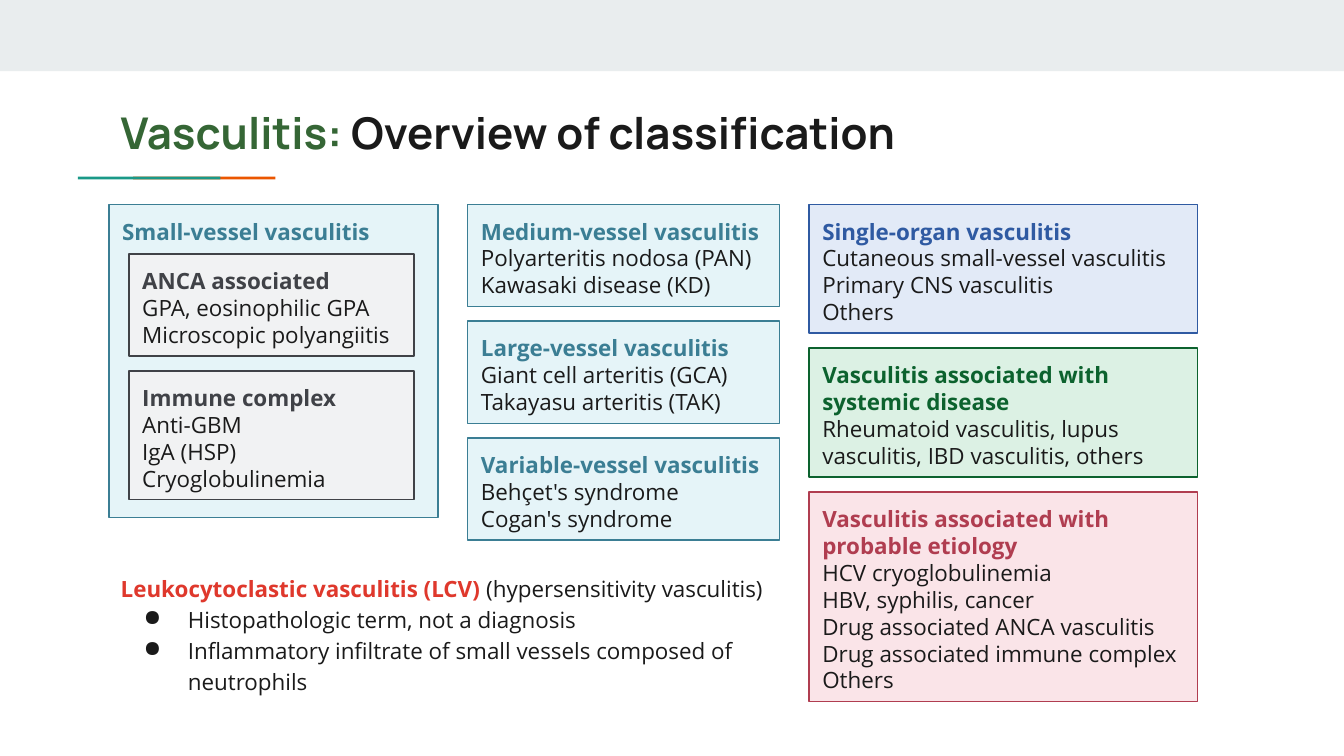
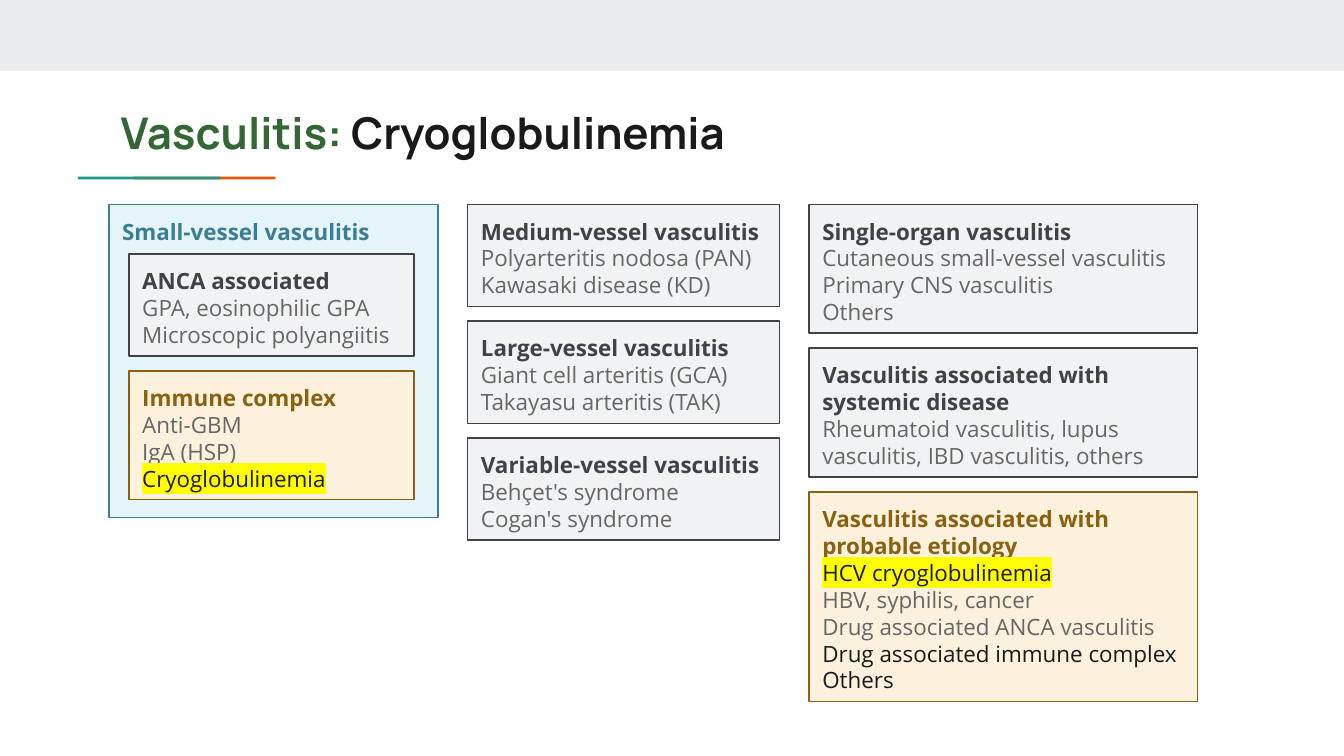
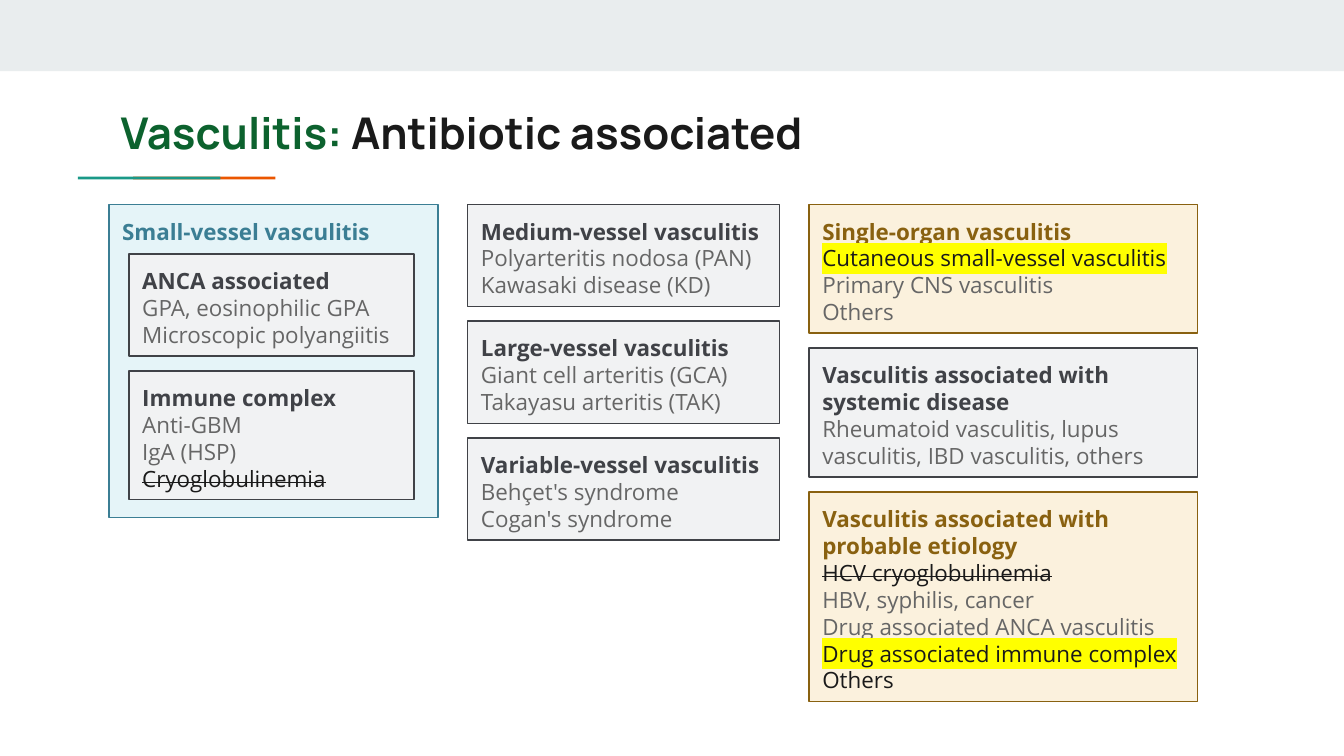
"""Build three slides on the classification of vasculitis."""
from dataclasses import dataclass, field
from enum import Enum, auto

from lxml import etree
from pptx import Presentation
from pptx import util as u
from pptx.dml.color import RGBColor
from pptx.enum import shapes, text
from pptx.oxml import ns

SLIDE_WIDTH = u.Inches(10)
SLIDE_HEIGHT = u.Inches(5.625)
CELL = SLIDE_WIDTH // 100
PADDING = 1
TOP_ROW = 15.2
BOX_GAP = 1.1
LINE_ROWS = 2
BOX_EXTRA_ROWS = 1.6

TITLE_FONT, TITLE_SIZE = "Manrope", u.Pt(23.4)
BODY_FONT, BODY_SIZE = "Open Sans", u.Pt(12)

BAND = RGBColor(0xE9, 0xED, 0xEE)
ORANGE = RGBColor(0xEB, 0x56, 0x00)
TURQUOISE = RGBColor(0x1A, 0x99, 0x88)
INK = RGBColor(0x1A, 0x1A, 0x1A)
MUTED = RGBColor(0x66, 0x66, 0x66)
YELLOW = RGBColor(0xFF, 0xFF, 0x00)
RED = RGBColor(0xDF, 0x38, 0x2C)
TITLE_GREEN = RGBColor(0x35, 0x66, 0x35)
DEEP_GREEN = RGBColor(0x0C, 0x62, 0x2E)


@dataclass(frozen=True)
class Theme:
    """Fill of a box and the colour of its outline and heading."""
    fill: RGBColor
    accent: RGBColor


TEAL = Theme(RGBColor(0xE5, 0xF4, 0xF8), RGBColor(0x3B, 0x7E, 0x94))
GRAY = Theme(RGBColor(0xF1, 0xF2, 0xF3), RGBColor(0x40, 0x42, 0x47))
BLUE = Theme(RGBColor(0xE2, 0xEA, 0xF7), RGBColor(0x2F, 0x5A, 0xA2))
GREEN = Theme(RGBColor(0xDC, 0xF1, 0xE4), DEEP_GREEN)
PINK = Theme(RGBColor(0xFA, 0xE4, 0xE8), RGBColor(0xB0, 0x3D, 0x50))
AMBER = Theme(RGBColor(0xFB, 0xF1, 0xDD), RGBColor(0x89, 0x61, 0x10))


class Mark(Enum):
    """Emphasis of one entry."""
    PLAIN = auto()
    HIGHLIGHT = auto()
    STRIKE = auto()


@dataclass(frozen=True)
class Area:
    """Rectangle in grid columns and rows."""
    column: float
    row: float
    columns: float
    rows: float

    def lengths(self) -> tuple[int, ...]:
        """Return left, top, width and height."""
        return tuple(round(n * CELL) for n in (self.column, self.row, self.columns, self.rows))


@dataclass(frozen=True)
class Box:
    """Disease group with its entries."""
    heading: str
    entries: tuple[str, ...]
    theme: Theme
    lines: int


@dataclass(frozen=True)
class Stack:
    """Boxes placed below one another."""
    column: float
    row: float
    columns: float
    boxes: tuple[Box, ...]


@dataclass(frozen=True)
class Focus:
    """Theme and marked entries of a box on a focused slide."""
    theme: Theme
    marks: dict[str, Mark]


@dataclass(frozen=True)
class Topic:
    """Content that differs from slide to slide."""
    title: str
    title_color: RGBColor = TITLE_GREEN
    overview: bool = False
    focuses: dict[str, Focus] = field(default_factory=dict)


IMMUNE = "Immune complex"
SINGLE_ORGAN = "Single-organ vasculitis"
ETIOLOGY = "Vasculitis associated with probable etiology"
CRYO = "Cryoglobulinemia"
HCV = "HCV cryoglobulinemia"
CUTANEOUS = "Cutaneous small-vessel vasculitis"
DRUG_IMMUNE = "Drug associated immune complex"
OTHERS = "Others"

SMALL_VESSEL = Box("Small-vessel vasculitis", (), TEAL, 1)
SMALL_VESSEL_AREA = Area(8.1, TOP_ROW, 24.5, 23.3)
STACKS = (
    Stack(9.6, 18.9, 21.2, (
        Box("ANCA associated", ("GPA, eosinophilic GPA", "Microscopic polyangiitis"), GRAY, 3),
        Box(IMMUNE, ("Anti-GBM", "IgA (HSP)", CRYO), GRAY, 4),
    )),
    Stack(34.8, TOP_ROW, 23.2, (
        Box("Medium-vessel vasculitis",
            ("Polyarteritis nodosa (PAN)", "Kawasaki disease (KD)"), TEAL, 3),
        Box("Large-vessel vasculitis",
            ("Giant cell arteritis (GCA)", "Takayasu arteritis (TAK)"), TEAL, 3),
        Box("Variable-vessel vasculitis", ("Behçet's syndrome", "Cogan's syndrome"), TEAL, 3),
    )),
    Stack(60.2, TOP_ROW, 28.9, (
        Box(SINGLE_ORGAN, (CUTANEOUS, "Primary CNS vasculitis", OTHERS), BLUE, 4),
        Box("Vasculitis associated with systemic disease",
            ("Rheumatoid vasculitis, lupus vasculitis, IBD vasculitis, others",), GREEN, 4),
        Box(ETIOLOGY, (HCV, "HBV, syphilis, cancer", "Drug associated ANCA vasculitis",
                       DRUG_IMMUNE, OTHERS), PINK, 7),
    )),
)
TOPICS = (
    Topic("Overview of classification", overview=True),
    Topic(CRYO, focuses={
        IMMUNE: Focus(AMBER, {CRYO: Mark.HIGHLIGHT}),
        ETIOLOGY: Focus(AMBER, {HCV: Mark.HIGHLIGHT, DRUG_IMMUNE: Mark.PLAIN,
                                OTHERS: Mark.PLAIN}),
    }),
    Topic("Antibiotic associated", DEEP_GREEN, focuses={
        IMMUNE: Focus(GRAY, {CRYO: Mark.STRIKE}),
        SINGLE_ORGAN: Focus(AMBER, {CUTANEOUS: Mark.HIGHLIGHT}),
        ETIOLOGY: Focus(AMBER, {HCV: Mark.STRIKE, DRUG_IMMUNE: Mark.HIGHLIGHT,
                                OTHERS: Mark.PLAIN}),
    }),
)
LCV_NOTES = (
    "Histopathologic term, not a diagnosis",
    "Inflammatory infiltrate of small vessels composed of neutrophils",
)


def add_run(paragraph, words: str, color: RGBColor, bold: bool = False,
            font: str = BODY_FONT, size: int = BODY_SIZE, mark: Mark = Mark.PLAIN) -> None:
    """Append one formatted run."""
    run = paragraph.add_run()
    run.text = words
    run.font.name, run.font.size, run.font.bold = font, size, bold
    run.font.color.rgb = color
    properties = run._r.get_or_add_rPr()
    if mark is Mark.STRIKE:
        properties.set("strike", "sngStrike")
    elif mark is Mark.HIGHLIGHT:
        highlight = etree.Element(ns.qn("a:highlight"))
        etree.SubElement(highlight, ns.qn("a:srgbClr"), val=str(YELLOW))
        properties.find(ns.qn("a:solidFill")).addnext(highlight)


def add_bullet(paragraph) -> None:
    """Give a paragraph a hanging round bullet."""
    properties = paragraph._p.get_or_add_pPr()
    properties.set("marL", str(u.Inches(0.5)))
    properties.set("indent", str(u.Inches(-0.33)))
    color = etree.SubElement(properties, ns.qn("a:buClr"))
    etree.SubElement(color, ns.qn("a:srgbClr"), val=str(INK))
    etree.SubElement(properties, ns.qn("a:buChar"), char="●")


def prepare_frame(shape):
    """Set wrapping, insets and top alignment and return the text frame."""
    frame = shape.text_frame
    frame.word_wrap = True
    frame.vertical_anchor = text.MSO_ANCHOR.TOP
    frame.margin_left = frame.margin_right = PADDING * CELL
    frame.margin_top = frame.margin_bottom = PADDING * CELL
    return frame


def add_rectangle(slide, area: Area, fill: RGBColor, outline: RGBColor | None = None):
    """Draw a flat rectangle."""
    shape = slide.shapes.add_shape(shapes.MSO_SHAPE.RECTANGLE, *area.lengths())
    shape.shadow.inherit = False
    shape.fill.solid()
    shape.fill.fore_color.rgb = fill
    if outline is None:
        shape.line.fill.background()
    else:
        shape.line.color.rgb = outline
        shape.line.width = u.Pt(0.75)
    return shape


def add_header(slide, topic: Topic) -> None:
    """Draw the top band, the two-colour rule and the title."""
    add_rectangle(slide, Area(0, 0, 100, 5.3), BAND)
    for column, color in ((9.9, ORANGE), (5.8, TURQUOISE)):
        add_rectangle(slide, Area(column, 13.15, 10.6, 0.2), color)
    title = slide.shapes.add_textbox(*Area(8, 6.9, 84.1, 5.9).lengths())
    paragraph = prepare_frame(title).paragraphs[0]
    add_run(paragraph, "Vasculitis:", topic.title_color, True, TITLE_FONT, TITLE_SIZE)
    add_run(paragraph, f" {topic.title}", INK, True, TITLE_FONT, TITLE_SIZE)


def add_box(slide, box: Box, area: Area, theme: Theme, entry_color: RGBColor,
            marks: dict[str, Mark]) -> None:
    """Draw a disease group with marked entries in dark ink."""
    frame = prepare_frame(add_rectangle(slide, area, theme.fill, theme.accent))
    heading = frame.paragraphs[0]
    heading.alignment = text.PP_ALIGN.LEFT
    add_run(heading, box.heading, theme.accent, bold=True)
    for entry in box.entries:
        paragraph = frame.add_paragraph()
        paragraph.alignment = text.PP_ALIGN.LEFT
        color = INK if entry in marks else entry_color
        add_run(paragraph, entry, color, mark=marks.get(entry, Mark.PLAIN))


def add_stack(slide, stack: Stack, topic: Topic) -> None:
    """Draw boxes downwards, each as tall as its lines need."""
    row = stack.row
    for box in stack.boxes:
        rows = BOX_EXTRA_ROWS + LINE_ROWS * box.lines
        default = Focus(box.theme if topic.overview else GRAY, {})
        focus = topic.focuses.get(box.heading, default)
        add_box(slide, box, Area(stack.column, row, stack.columns, rows), focus.theme,
                INK if topic.overview else MUTED, focus.marks)
        row += rows + BOX_GAP


def add_lcv_notes(slide) -> None:
    """Write the notes on leukocytoclastic vasculitis."""
    notes = slide.shapes.add_textbox(*Area(8, 41.5, 50, 11).lengths())
    frame = prepare_frame(notes)
    lead = frame.paragraphs[0]
    add_run(lead, "Leukocytoclastic vasculitis (LCV)", RED, bold=True)
    add_run(lead, " (hypersensitivity vasculitis)", INK)
    for note in LCV_NOTES:
        paragraph = frame.add_paragraph()
        add_bullet(paragraph)
        add_run(paragraph, note, INK)
    for paragraph in frame.paragraphs:
        paragraph.line_spacing = 1.15


def main() -> None:
    """Build and save the presentation."""
    presentation = Presentation()
    presentation.slide_width, presentation.slide_height = SLIDE_WIDTH, SLIDE_HEIGHT
    for topic in TOPICS:
        slide = presentation.slides.add_slide(presentation.slide_layouts[6])
        add_header(slide, topic)
        add_box(slide, SMALL_VESSEL, SMALL_VESSEL_AREA, SMALL_VESSEL.theme, INK, {})
        for stack in STACKS:
            add_stack(slide, stack, topic)
        if topic.overview:
            add_lcv_notes(slide)
    presentation.save("out.pptx")


if __name__ == "__main__":
    main()
